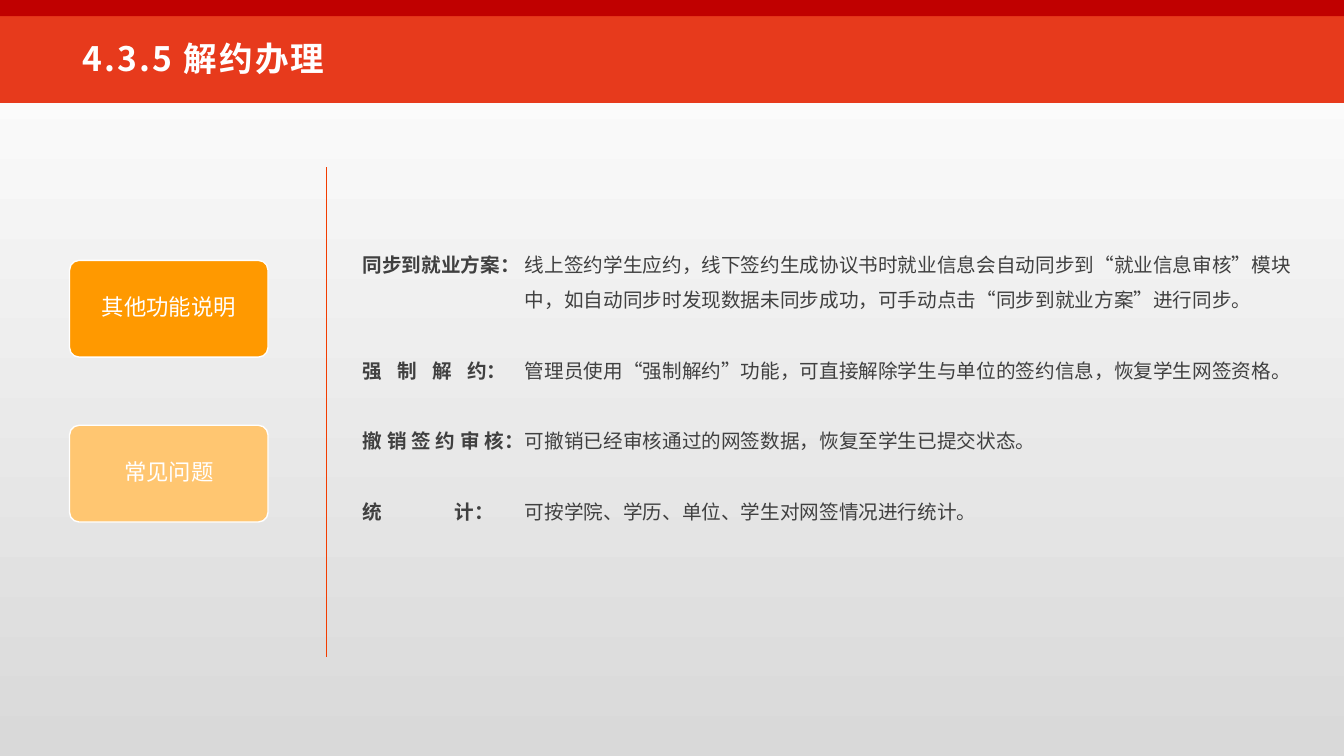
from lxml.etree import SubElement
from pptx import Presentation
from pptx.dml.color import RGBColor
from pptx.enum.shapes import MSO_CONNECTOR, MSO_SHAPE
from pptx.enum.text import MSO_ANCHOR, PP_ALIGN
from pptx.oxml.ns import qn
from pptx.util import Pt

FONT = "Noto Sans CJK SC"
WHITE = RGBColor(0xFF, 0xFF, 0xFF)
GREY = RGBColor(0xD9, 0xD9, 0xD9)
TEXT = RGBColor(0x40, 0x40, 0x40)
RED = RGBColor(0xE7, 0x3A, 0x1C)
DARK_RED = RGBColor(0xC0, 0x00, 0x00)
LINE_RED = RGBColor(0xF2, 0x3C, 0x00)
ORANGE = RGBColor(0xFF, 0x99, 0x00)
PALE_ORANGE = RGBColor(0xFF, 0xC6, 0x71)

LINE_PITCH = 25.2
CARDS = [("其他功能说明", ORANGE), ("常见问题", PALE_ORANGE)]

# Label, letter spacing that stretches it, description, lines it takes
FUNCTIONS = [
    ("同步到就业方案：", 0,
     "线上签约学生应约，线下签约生成协议书时就业信息会自动同步到“就业信息审核”模块中，"
     "如自动同步时发现数据未同步成功，可手动点击“同步到就业方案”进行同步。", 2),
    ("强制解约：", 10.8,
     "管理员使用“强制解约”功能，可直接解除学生与单位的签约信息，恢复学生网签资格。", 1),
    ("撤销签约审核：", 3.4, "可撤销已经审核通过的网签数据，恢复至学生已提交状态。", 1),
    ("统计：", 51.7, "可按学院、学历、单位、学生对网签情况进行统计。", 1),
]


def format_span(span, size, colour, bold=False, spacing=0):
    span.font.size = Pt(size)
    span.font.bold = bold
    span.font.color.rgb = colour
    span.font.name = FONT
    properties = span._r.get_or_add_rPr()
    properties.set("lang", "zh-CN")
    if spacing:
        properties.set("spc", str(round(spacing * 100)))
    SubElement(properties, qn("a:ea")).set("typeface", FONT)


def add_block(page, kind, left, top, width, height, fill):
    block = page.shapes.add_shape(kind, Pt(left), Pt(top), Pt(width), Pt(height))
    block.shadow.inherit = False
    block.fill.solid()
    block.fill.fore_color.rgb = fill
    block.line.fill.background()
    return block


def add_text_box(page, left, top, width, height):
    box = page.shapes.add_textbox(Pt(left), Pt(top), Pt(width), Pt(height))
    box.text_frame.word_wrap = True
    return box


def add_card(page, top, text, fill):
    card = add_block(page, MSO_SHAPE.ROUNDED_RECTANGLE, 49.7, top, 141.8, 69.1, fill)
    card.adjustments[0] = 0.1
    card.line.color.rgb = WHITE
    card.line.width = Pt(1)
    frame = card.text_frame
    frame.vertical_anchor = MSO_ANCHOR.MIDDLE
    frame.text = text
    paragraph = frame.paragraphs[0]
    paragraph.alignment = PP_ALIGN.CENTER
    paragraph.line_spacing = 0.9
    format_span(paragraph.runs[0], 16, WHITE)


def add_divider(page, x, top, bottom):
    divider = page.shapes.add_connector(
        MSO_CONNECTOR.STRAIGHT, Pt(x), Pt(top), Pt(x), Pt(bottom))
    divider.line.color.rgb = LINE_RED
    divider.line.width = Pt(0.5)
    SubElement(divider._element.spPr, qn("a:effectLst"))


def add_column(box, rows, bold=False):
    """Each row is a list of (text, letter spacing) and the blank lines after it."""
    frame = box.text_frame
    for index, (parts, gap_lines) in enumerate(rows):
        paragraph = frame.add_paragraph() if index else frame.paragraphs[0]
        paragraph.line_spacing = Pt(LINE_PITCH)
        paragraph.space_after = Pt(LINE_PITCH * gap_lines)
        for text, spacing in parts:
            span = paragraph.add_run()
            span.text = text
            format_span(span, 14, TEXT, bold, spacing)


def set_background(page):
    fill = page.background.fill
    fill.gradient()
    fill.gradient_angle = 270
    for stop, colour, position in zip(fill.gradient_stops, (WHITE, GREY), (0, 1)):
        stop.color.rgb = colour
        stop.position = position


def main():
    deck = Presentation()
    deck.slide_width, deck.slide_height = Pt(960), Pt(540)
    page = deck.slides.add_slide(deck.slide_layouts[6])
    set_background(page)

    # Header bands and title
    add_block(page, MSO_SHAPE.RECTANGLE, 0, 0, 960, 73.5, RED)
    add_block(page, MSO_SHAPE.RECTANGLE, 0, 0, 960, 11.5, DARK_RED)
    title = add_text_box(page, 51.8, 20.2, 579, 41.8)
    title.text_frame.vertical_anchor = MSO_ANCHOR.MIDDLE
    title.text_frame.text = "4.3.5 解约办理"
    format_span(title.text_frame.paragraphs[0].runs[0], 24, WHITE, True, 1.5)

    # Navigation cards and divider
    add_divider(page, 233.3, 119.5, 469.4)
    for index, (text, fill) in enumerate(CARDS):
        add_card(page, 186 + 117.8 * index, text, fill)

    # Descriptions and their stretched labels
    descriptions = [([(text, 0)], 1) for _, _, text, _ in FUNCTIONS]
    labels = [([(label[:-2], spacing), (label[-2:], 0)], lines)
              for label, spacing, _, lines in FUNCTIONS]
    add_column(add_text_box(page, 367.9, 168.5, 568, 236), descriptions)
    add_column(add_text_box(page, 252, 168.5, 124.6, 211), labels, bold=True)

    deck.save("out.pptx")


if __name__ == "__main__":
    main()
